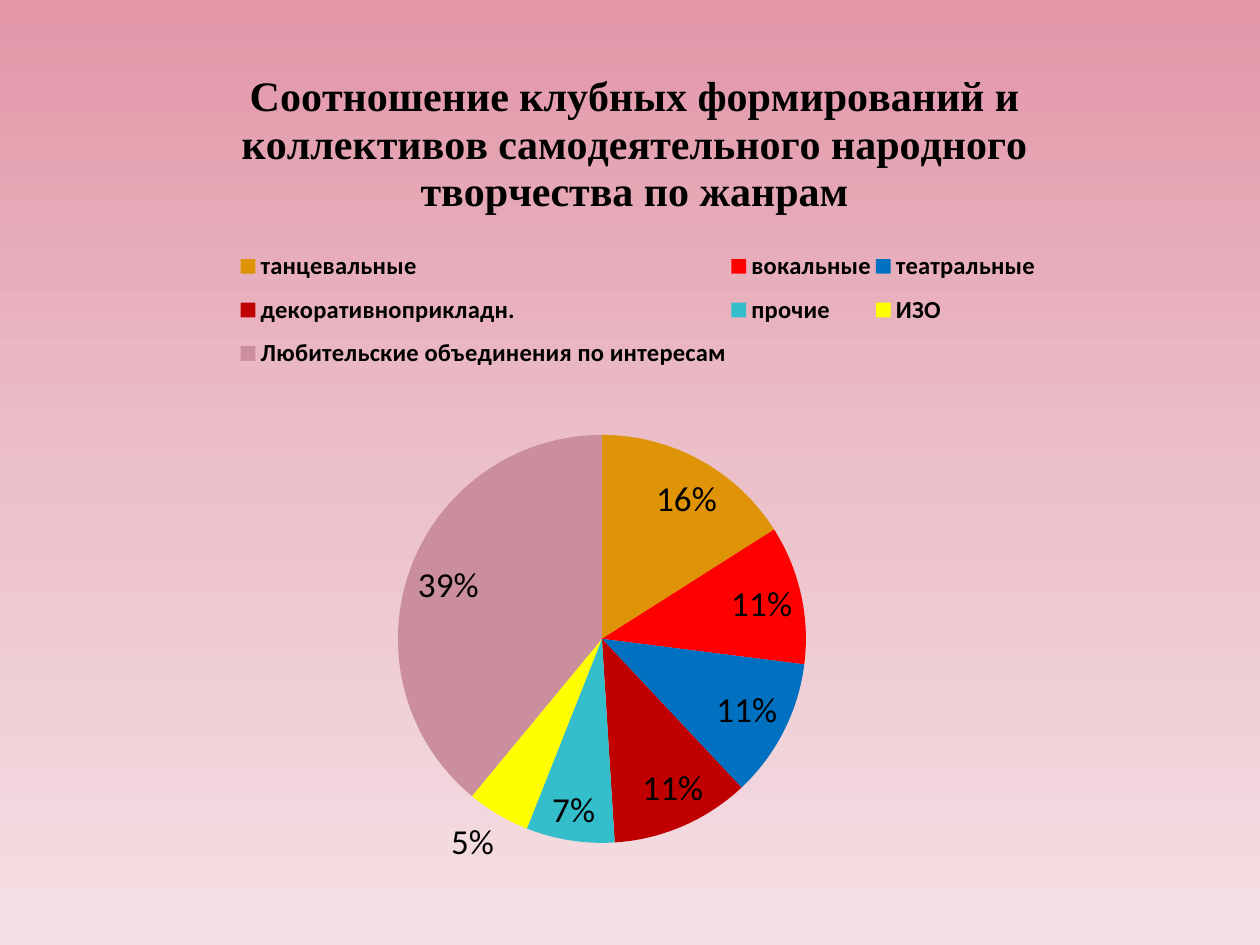
from copy import deepcopy

from lxml import etree
from pptx import Presentation
from pptx import util as u
from pptx.chart.data import CategoryChartData
from pptx.dml.color import RGBColor
from pptx.enum import chart as c
from pptx.oxml.ns import qn

PX = 914400 // 126
BLACK = RGBColor(0, 0, 0)
BACKGROUND = [(0, RGBColor(0xE2, 0x96, 0xA8)),
              (50, RGBColor(0xEB, 0xC0, 0xC9)),
              (100, RGBColor(0xF5, 0xE0, 0xE5))]
TITLE = ("Соотношение клубных формирований и коллективов "
         "самодеятельного народного творчества по жанрам")
GENRES = [
    ("танцевальные", 16, RGBColor(0xDF, 0x93, 0x07)),
    ("вокальные", 11, RGBColor(0xFF, 0x00, 0x00)),
    ("театральные", 11, RGBColor(0x00, 0x70, 0xC0)),
    ("декоративноприкладн.", 11, RGBColor(0xC0, 0x00, 0x00)),
    ("прочие", 7, RGBColor(0x34, 0xBE, 0xCC)),
    ("ИЗО", 5, RGBColor(0xFF, 0xFF, 0x00)),
    ("Любительские объединения по интересам", 39, RGBColor(0xCA, 0x8E, 0x9C)),
]
CHART_BOX = (44, 37, 1181, 873)
LEGEND_BOX = (236, 238, 804, 144)
PIE_BOX = (398, 435, 408, 408)


def style(font, size, bold=False, name="Calibri"):
    font.size, font.bold, font.name = u.Pt(size), bold, name
    font.color.rgb = BLACK


def place(element, box, after, inner=False):
    for old in element.findall(qn("c:layout")):
        element.remove(old)
    layout = etree.Element(qn("c:layout"))
    manual = etree.SubElement(layout, qn("c:manualLayout"))
    left, top, width, height = CHART_BOX
    values = [("xMode", "edge"), ("yMode", "edge"),
              ("x", round((box[0] - left) / width, 4)),
              ("y", round((box[1] - top) / height, 4)),
              ("w", round(box[2] / width, 4)),
              ("h", round(box[3] / height, 4))]
    if inner:
        values.insert(0, ("layoutTarget", "inner"))
    for tag, value in values:
        etree.SubElement(manual, qn("c:" + tag)).set("val", str(value))
    if after is None:
        element.insert(0, layout)
    else:
        element.find(qn(after)).addnext(layout)


presentation = Presentation()
presentation.slide_width = 1260 * PX
presentation.slide_height = 945 * PX
slide = presentation.slides.add_slide(presentation.slide_layouts[6])

fill = slide.background.fill
fill.gradient()
fill.gradient_angle = 270
last_stop = slide.background._cSld.findall(".//" + qn("a:gs"))[-1]
last_stop.addnext(deepcopy(last_stop))
for stop, (position, color) in zip(fill.gradient_stops, BACKGROUND):
    stop.position = position / 100
    stop.color.rgb = color

data = CategoryChartData()
data.categories = [name for name, _, _ in GENRES]
data.add_series("Series 1", [value for _, value, _ in GENRES])
chart = slide.shapes.add_chart(
    c.XL_CHART_TYPE.PIE, *(length * PX for length in CHART_BOX), data).chart
style(chart.font, 10)

chart.has_title = True
title_frame = chart.chart_title.text_frame
title_frame.text = TITLE
style(title_frame.paragraphs[0].runs[0].font, 24, True, "Times New Roman")
chart.chart_title.include_in_layout = False

chart.has_legend = True
legend = chart.legend
legend.position = c.XL_LEGEND_POSITION.TOP
legend.include_in_layout = False
style(legend.font, 14, True)
place(legend._element, LEGEND_BOX, "c:legendPos")

plot = chart.plots[0]
plot.vary_by_categories = True
place(chart._chartSpace.chart.plotArea, PIE_BOX, None, inner=True)
for index, (_, _, color) in enumerate(GENRES):
    point_fill = plot.series[0].points[index].format.fill
    point_fill.solid()
    point_fill.fore_color.rgb = color

labels = plot.series[0].data_labels
labels.show_percentage = True
labels.show_value = False
labels.number_format = "0%"
labels.number_format_is_linked = False
labels.position = c.XL_LABEL_POSITION.BEST_FIT
style(labels.font, 20)

presentation.save("out.pptx")
